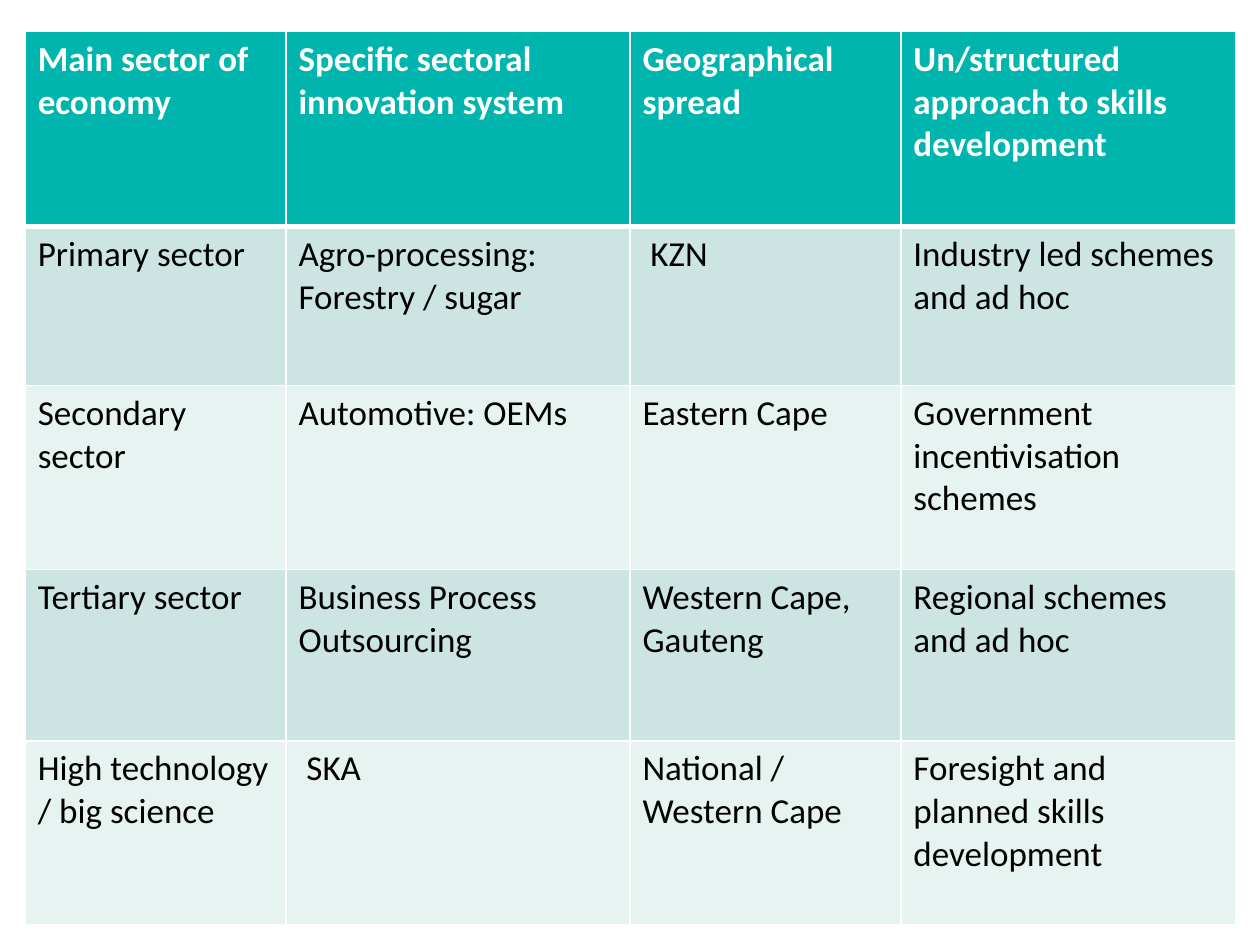
from dataclasses import dataclass

from lxml.etree import SubElement
from pptx import Presentation
from pptx.dml.color import RGBColor as RGB
from pptx.oxml.ns import qn
from pptx.util import Pt


@dataclass(frozen=True)
class Theme:
    font: str = "Calibri"
    size: int = 20
    header_fill: str = "00B5AD"
    header_text: str = "FFFFFF"
    band_fills: tuple = ("CCE5E3", "E7F3F1")
    body_text: str = "000000"
    border: str = "FFFFFF"
    thin: int = 1
    thick: int = 3


THEME = Theme()
LEFT, TOP = 14.4, 18
COL_WIDTHS = (149.04, 196.56, 154.8, 191.2)
ROW_HEIGHTS = (111.6, 90.72, 105.12, 97.92, 105.12)
SECTORS = (
    ("Main sector of economy", "Specific sectoral innovation system",
     "Geographical spread", "Un/structured approach to skills development"),
    ("Primary sector", "Agro-processing: Forestry / sugar",
     " KZN", "Industry led schemes and ad hoc"),
    ("Secondary sector", "Automotive: OEMs",
     "Eastern Cape", "Government incentivisation schemes"),
    ("Tertiary sector", "Business Process Outsourcing",
     "Western Cape, Gauteng", "Regional schemes and ad hoc"),
    ("High technology / big science", " SKA",
     "National / Western Cape", "Foresight and planned skills development"),
)


def set_borders(cell, top, bottom):
    """Draw all four sides; call before filling, as the schema puts lines first."""
    tc_pr = cell._tc.get_or_add_tcPr()
    widths = {"lnL": THEME.thin, "lnR": THEME.thin, "lnT": top, "lnB": bottom}
    for side, width in widths.items():
        ln = SubElement(tc_pr, qn(f"a:{side}"), w=str(Pt(width)))
        fill = SubElement(ln, qn("a:solidFill"))
        SubElement(fill, qn("a:srgbClr"), val=THEME.border)


def fill_cell(cell, text, fill, color, bold):
    cell.fill.solid()
    cell.fill.fore_color.rgb = RGB.from_string(fill)
    r = cell.text_frame.paragraphs[0].add_run()
    r.text = text
    r.font.name = THEME.font
    r.font.size = Pt(THEME.size)
    r.font.bold = bold
    r.font.color.rgb = RGB.from_string(color)


def add_sector_table(s):
    table = s.shapes.add_table(
        len(SECTORS), len(COL_WIDTHS), Pt(LEFT), Pt(TOP),
        Pt(sum(COL_WIDTHS)), Pt(sum(ROW_HEIGHTS))).table
    for column, width in zip(table.columns, COL_WIDTHS):
        column.width = Pt(width)
    for i, (row, height, texts) in enumerate(zip(table.rows, ROW_HEIGHTS, SECTORS)):
        row.height = Pt(height)
        header = i == 0
        fill = THEME.header_fill if header else THEME.band_fills[(i - 1) % 2]
        color = THEME.header_text if header else THEME.body_text
        for cell, text in zip(row.cells, texts):
            set_borders(cell, top=THEME.thick if i == 1 else THEME.thin,
                        bottom=THEME.thick if header else THEME.thin)
            fill_cell(cell, text, fill, color, bold=header)


def main():
    prs = Presentation()
    prs.slide_width, prs.slide_height = Pt(720), Pt(540)
    s = prs.slides.add_slide(prs.slide_layouts[6])
    add_sector_table(s)
    prs.save("out.pptx")


if __name__ == "__main__":
    main()
